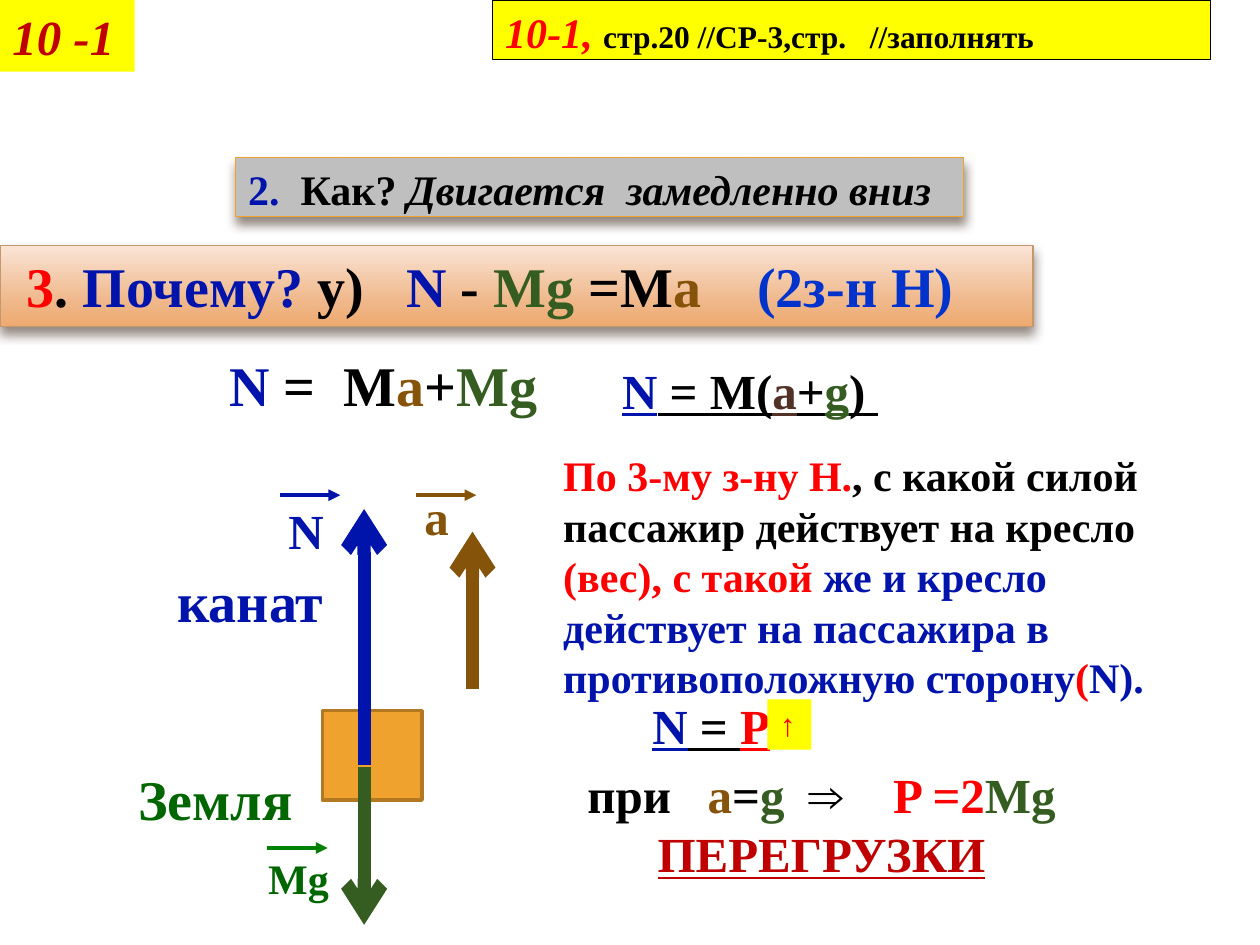
from copy import deepcopy

from lxml import etree
from pptx import Presentation
from pptx.dml.color import RGBColor
from pptx.enum.shapes import MSO_CONNECTOR, MSO_SHAPE
from pptx.enum.text import MSO_ANCHOR, MSO_AUTO_SIZE, PP_ALIGN
from pptx.oxml import parse_xml
from pptx.oxml.ns import nsdecls, qn
from pptx.util import Inches, Pt

LEFT, CENTER = PP_ALIGN.LEFT, PP_ALIGN.CENTER
COLS, ROWS = 100, 75


class Theme:
    font = "Times New Roman"
    small, body, formula, large = 18, 24, 28, 32
    hair, thin, edge, thick = 0.75, 2.25, 2, 7.5
    black, red, crimson, yellow = "000000", "FF0000", "C00000", "FFFF00"
    blue, law, brown, umber = "0014AC", "0033CC", "85540A", "523227"
    moss, earth, green = "365D21", "006600", "008000"
    orange, rust, tan, grey = "F0A22E", "B27822", "C3986D", "BFBFBF"
    shade = "4E3B30"
    peach = ((0, "FAE4D5"), (0.72, "EFB688"), (1, "EFAA6F"))


T = Theme


def rgb(value):
    return RGBColor.from_string(value)


def write(sp, *paragraphs, size=T.body, align=LEFT, wrap=True):
    """Fill sp; a paragraph is a list of (text, colour, optional run format)."""
    tf = sp.text_frame
    tf.word_wrap, tf.auto_size = wrap, MSO_AUTO_SIZE.NONE
    tf.vertical_anchor = MSO_ANCHOR.TOP
    for i, runs in enumerate(paragraphs):
        p = tf.add_paragraph() if i else tf.paragraphs[0]
        p.alignment, p.space_before = align, Pt(0)
        for text, color, *style in runs:
            fmt = style[0] if style else {}
            r = p.add_run()
            r.text = text
            r.font.name, r.font.bold = T.font, True
            r.font.size = Pt(fmt.get("size", size))
            r.font.color.rgb = rgb(color)
            r.font.italic = fmt.get("italic", False)
            r.font.underline = fmt.get("underline", False)
    return sp


class Board:
    """Current slide, measured in columns and rows of a 100 x 75 grid."""

    def __init__(self, prs):
        self.cw, self.rh = prs.slide_width / COLS, prs.slide_height / ROWS
        self.s = prs.slides.add_slide(prs.slide_layouts[1])

    def scale(self, x, y, *more):
        return [round(v * u) for v, u in zip((x, y, *more), (self.cw, self.rh) * 2)]

    def place(self, sp, at):
        sp.left, sp.top, sp.width, sp.height = self.scale(*at)
        return sp

    def title(self, at, *paragraphs, **fmt):
        return write(self.place(self.s.shapes.title, at), *paragraphs, **fmt)

    def body(self, at, *paragraphs, **fmt):
        sp = write(self.place(self.s.placeholders[1], at), *paragraphs, **fmt)
        for p in sp.text_frame.paragraphs:
            pPr = p._p.get_or_add_pPr()
            pPr.set("marL", "0")
            pPr.set("indent", "0")
            etree.SubElement(pPr, qn("a:buNone"))
        return sp

    def text(self, at, *paragraphs, shapes=None, **fmt):
        shapes = shapes or self.s.shapes
        return write(shapes.add_textbox(*self.scale(*at)), *paragraphs, **fmt)

    def box(self, at, fill, line):
        sp = self.s.shapes.add_shape(MSO_SHAPE.RECTANGLE, *self.scale(*at))
        sp.shadow.inherit = False
        return self.paint(sp, fill, line, T.edge)

    def paint(self, sp, fill, line=None, width=T.hair):
        """Fill with one colour, or with (position, colour) stops from top to bottom."""
        if isinstance(fill, str):
            sp.fill.solid()
            sp.fill.fore_color.rgb = rgb(fill)
        else:
            sp.fill.gradient()
            sp.fill.gradient_angle = 270
            stops = sp._element.spPr.find(qn("a:gradFill")).find(qn("a:gsLst"))
            for _ in fill[2:]:
                stops.append(deepcopy(stops[-1]))
            for stop, (position, color) in zip(sp.fill.gradient_stops, fill):
                stop.position, stop.color.rgb = position, rgb(color)
        if line:
            sp.line.color.rgb, sp.line.width = rgb(line), Pt(width)
        return sp

    def shadow(self, sp):
        sp._element.spPr.append(parse_xml(
            f'<a:effectLst {nsdecls("a")}><a:outerShdw blurRad="{Pt(6)}" dist="{Pt(4)}" '
            f'dir="5400000" rotWithShape="0"><a:srgbClr val="{T.shade}">'
            '<a:alpha val="60000"/></a:srgbClr></a:outerShdw></a:effectLst>'))

    def arrow(self, start, end, color, width=T.thick, head="arrow", shapes=None):
        cx = (shapes or self.s.shapes).add_connector(
            MSO_CONNECTOR.STRAIGHT, *self.scale(*start), *self.scale(*end))
        cx.line.color.rgb, cx.line.width = rgb(color), Pt(width)
        etree.SubElement(cx.line._get_or_add_ln(), qn("a:tailEnd"), type=head)
        etree.SubElement(cx._element.spPr, qn("a:effectLst"))

    def vector(self, at, name, color, bar, bar_color=None, size=T.formula):
        """Label with a short arrow over it, grouped; bar is the arrow's left end."""
        shapes = self.s.shapes.add_group_shape().shapes
        self.text(at, [(name, color)], shapes=shapes, size=size)
        x, y = bar
        self.arrow(bar, (x + 4.8, y), bar_color or color, T.thin, "triangle", shapes)


def main():
    prs = Presentation()
    prs.slide_width, prs.slide_height = Inches(10), Inches(7.5)
    b = Board(prs)
    italic, under = {"italic": True}, {"underline": True}

    b.paint(b.title((39.1, 0, 57, 4.7), [
        ("10-1, ", T.red, italic),
        ("стр.20 //СР-3,стр.   //заполнять", T.black, {"size": T.small})]),
        T.yellow, T.black)
    b.body((43.7, 35.2, 49.6, 21.2), [
        ("По 3-му з-ну Н.", T.red),
        (", с какой силой пассажир действует на кресло ", T.black),
        ("(вес), с такой ", T.red),
        ("же и кресло действует на пассажира в противоположную сторону", T.blue),
        ("(", T.red), ("N).", T.blue)])
    b.paint(b.text((0, 0, 10.7, 5.7), [("10 -1", T.crimson, italic)], size=T.formula),
            T.yellow)

    # Forces on the load
    b.box((25.6, 56.4, 7.9, 7.1), T.orange, T.rust)
    b.arrow((28.9, 60.9), (28.9, 73.4), T.moss)
    b.arrow((28.9, 60.7), (28.9, 40.4), T.blue)
    b.arrow((37.5, 54.7), (37.5, 42.2), T.brown)
    b.vector((20.3, 67.2, 7.8, 5), "Mg", T.earth, (21.2, 67.3), T.green, T.body)
    b.vector((21.9, 39.2, 7.8, 5.7), "N", T.blue, (22.2, 39.3))
    b.vector((32.7, 38.1, 7.8, 5.7), "а", T.brown, (33, 39.3))
    b.text((10, 60.2, 17.2, 6.4), [("Земля", T.earth)], size=T.large)
    b.text((13.1, 44.5, 14, 6.4), [("канат", T.blue)], size=T.large)

    # Questions and formulas
    how = b.text((18.7, 12.5, 57.8, 4.7), [
        ("2.  ", T.blue), ("Как?", T.black),
        (" Двигается  замедленно вниз", T.black, italic)])
    why = b.text((0, 19.5, 82, 6.4), [
        (" 3", T.red), (". ", T.black), ("Почему? ", T.blue), ("y)   ", T.black),
        ("N", T.blue), (" - ", T.black), ("Mg", T.moss), (" =M", T.black),
        ("a    ", T.brown), ("(2з-н Н)", T.law)], size=T.large)
    for sp, fill, line in ((how, T.grey, T.orange), (why, T.peach, T.tan)):
        b.shadow(b.paint(sp, fill, line))

    b.text((17.2, 27.3, 28.1, 6.4), [
        ("N", T.blue), (" =  M", T.black), ("a", T.brown), ("+", T.black),
        ("Mg", T.moss)], size=T.large)
    b.text((48.4, 28.1, 25, 5.7), [
        ("N", T.blue, under), (" = M(", T.black, under), ("a", T.umber, under),
        ("+", T.black, under), ("g", T.moss, under), (") ", T.black, under)],
        size=T.formula)
    b.text((50.8, 54.7, 11.7, 5.7), [
        ("N", T.blue, under), (" = ", T.black, under), ("P", T.red, under)],
        size=T.formula)
    b.paint(b.text((60.9, 55.5, 3.5, 4), [("↑", T.red)], size=T.small, wrap=False),
            T.yellow)
    b.text((43.7, 60.2, 43, 10.4), [
        ("при   ", T.black), ("a", T.brown), ("=", T.black), ("g  ", T.moss),
        ("⇒    ", T.black), ("P =2", T.red), ("Mg", T.moss)],
        [("ПЕРЕГРУЗКИ", T.crimson, under)], size=T.formula, align=CENTER)

    prs.save("out.pptx")


if __name__ == "__main__":
    main()
